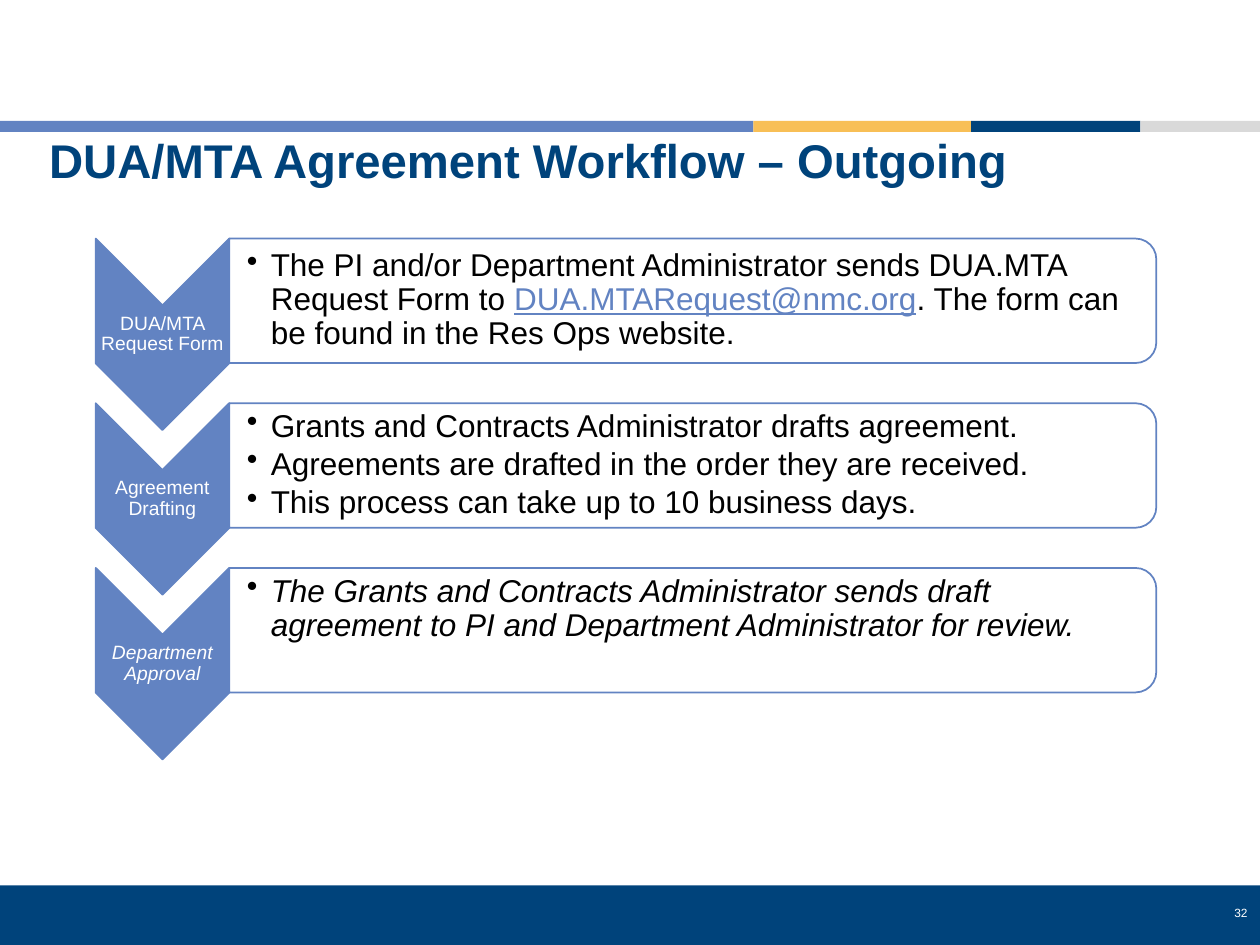
import pptx
import pptx.dml.color
import pptx.enum.shapes
import pptx.enum.text
import pptx.oxml.ns
import pptx.util
from lxml import etree

Cm, Pt = pptx.util.Cm, pptx.util.Pt
SHAPE = pptx.enum.shapes.MSO_SHAPE
ALIGN = pptx.enum.text.PP_ALIGN
ANCHOR = pptx.enum.text.MSO_ANCHOR

COLORS = {
    "navy": "00437B",
    "blue": "6283C2",
    "gold": "F8BF56",
    "gray": "D9D9D9",
    "white": "FFFFFF",
    "black": "000000",
}
TITLE = "DUA/MTA Agreement Workflow – Outgoing"
PAGE_NUMBER = "32"
BANDS = [("blue", 0, 15.19), ("gold", 15.19, 19.58), ("navy", 19.58, 22.99), ("gray", 22.99, 25.4)]
STEPS = [
    {
        "label": "DUA/MTA Request Form",
        "points": [[
            "The PI and/or Department Administrator sends DUA.MTA Request Form to ",
            ("DUA.MTARequest@nmc.org", {"color": "blue", "underline": True}),
            ". The form can be found in the Res Ops website.",
        ]],
    },
    {
        "label": "Agreement Drafting",
        "points": [
            ["Grants and Contracts Administrator drafts agreement."],
            ["Agreements are drafted in the order they are received."],
            ["This process can take up to 10 business days."],
        ],
    },
    {
        "label": "Department Approval",
        "points": [[
            "The Grants and Contracts Administrator sends draft agreement "
            "to PI and Department Administrator for review."
        ]],
        "italic": True,
        "anchor": ANCHOR.TOP,
    },
]
STEP_TOP, STEP_PITCH = 4.81, 3.32
CHEVRON_LEFT, CHEVRON_WIDTH, CHEVRON_HEIGHT = 1.93, 2.69, 3.86
PANEL_WIDTH, PANEL_HEIGHT = 18.69, 2.51


def rgb(name):
    return pptx.dml.color.RGBColor.from_string(COLORS[name])


def add_block(page, kind, left, top, width, height, fill, line=None, turned=False):
    if turned:
        left, top = left + (width - height) / 2, top + (height - width) / 2
        width, height = height, width
    block = page.shapes.add_shape(kind, Cm(left), Cm(top), Cm(width), Cm(height))
    block.rotation = 90 if turned else 0
    block.shadow.inherit = False
    block.fill.solid()
    block.fill.fore_color.rgb = rgb(fill)
    if line:
        block.line.color.rgb = rgb(line)
        block.line.width = Pt(1)
    else:
        block.line.fill.background()


def add_bullet(para):
    properties = para._p.get_or_add_pPr()
    properties.set("marL", str(Cm(0.48)))
    properties.set("indent", str(-Cm(0.48)))
    bullet = etree.SubElement(properties, pptx.oxml.ns.qn("a:buChar"))
    bullet.set("char", "•")


def write_text(box, paragraphs, place, size, color, bold=False, italic=False, align=ALIGN.LEFT,
               anchor=ANCHOR.MIDDLE, insets=(0.03, 0.03, 0.03, 0.03), bullets=False):
    box.left, box.top, box.width, box.height = [Cm(length) for length in place]
    frame = box.text_frame
    frame.word_wrap = True
    frame.auto_size = pptx.enum.text.MSO_AUTO_SIZE.NONE
    frame.vertical_anchor = anchor
    (frame.margin_left, frame.margin_top,
     frame.margin_right, frame.margin_bottom) = [Cm(inset) for inset in insets]
    for index, spans in enumerate(paragraphs):
        para = frame.add_paragraph() if index else frame.paragraphs[0]
        if bullets:
            add_bullet(para)
            para.space_after = Pt(2.5)
        para.space_before = Pt(0)
        para.line_spacing = 0.9
        para.alignment = align
        for item in spans:
            text, changes = item if isinstance(item, tuple) else (item, {})
            span = para.add_run()
            span.text = text
            span.font.name = "Arial"
            span.font.size = Pt(size)
            span.font.bold = bold
            span.font.italic = italic
            span.font.underline = changes.get("underline", False)
            span.font.color.rgb = rgb(changes.get("color", color))


def new_box(page):
    return page.shapes.add_textbox(0, 0, 0, 0)


def add_step(page, step, top):
    italic = step.get("italic", False)
    panel_left = CHEVRON_LEFT + CHEVRON_WIDTH
    add_block(page, SHAPE.CHEVRON, CHEVRON_LEFT, top, CHEVRON_WIDTH, CHEVRON_HEIGHT,
              "blue", line="blue", turned=True)
    write_text(new_box(page), [[step["label"]]],
               (CHEVRON_LEFT, top + CHEVRON_WIDTH / 2, CHEVRON_WIDTH, CHEVRON_HEIGHT - CHEVRON_WIDTH),
               11, "white", italic=italic, align=ALIGN.CENTER)
    add_block(page, SHAPE.ROUND_2_SAME_RECTANGLE, panel_left, top, PANEL_WIDTH, PANEL_HEIGHT,
              "white", line="blue", turned=True)
    write_text(new_box(page), step["points"], (panel_left, top + 0.12, 18.59, 2.26),
               18, "black", italic=italic, anchor=step.get("anchor", ANCHOR.MIDDLE),
               insets=(0.36, 0.03, 0.03, 0.03), bullets=True)


def main():
    deck = pptx.Presentation()
    deck.slide_width, deck.slide_height = Cm(25.4), Cm(19.05)
    page = deck.slides.add_slide(deck.slide_layouts[5])
    write_text(page.shapes.title, [[TITLE]], (0.81, 2.69, 24.31, 1.22), 27, "navy", bold=True,
               anchor=ANCHOR.BOTTOM, insets=(0.18, 0.1, 0.18, 0.1))
    add_block(page, SHAPE.RECTANGLE, 0, 17.85, 25.4, 1.2, "navy")
    for color, start, end in BANDS:
        add_block(page, SHAPE.RECTANGLE, start, 2.44, end - start, 0.22, color)
    write_text(new_box(page), [[PAGE_NUMBER]], (23.65, 18.16, 1.75, 0.53), 6.8, "white",
               align=ALIGN.RIGHT, insets=(0.25, 0, 0.25, 0))
    for index, step in enumerate(STEPS):
        add_step(page, step, STEP_TOP + index * STEP_PITCH)
    deck.save("out.pptx")


if __name__ == "__main__":
    main()
